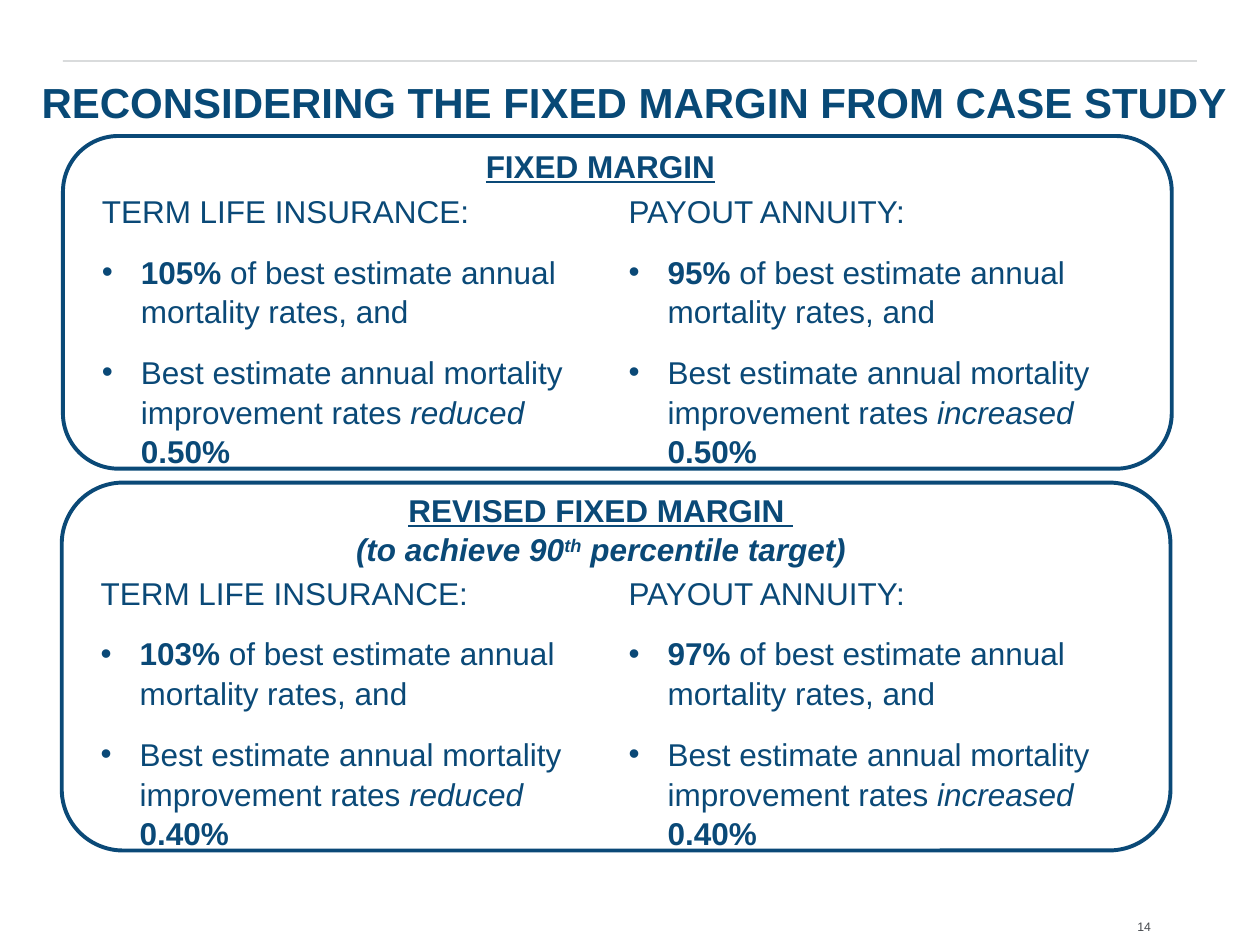
"""Build the slide comparing the fixed margin with the revised fixed margin."""
import pptx
import pptx.dml.color
import pptx.enum.shapes
import pptx.enum.text
import pptx.oxml.ns
import pptx.util
from lxml import etree

Inches, Pt = pptx.util.Inches, pptx.util.Pt
ALIGN, ANCHOR = pptx.enum.text.PP_ALIGN, pptx.enum.text.MSO_ANCHOR
SHAPE = pptx.enum.shapes.MSO_SHAPE

COLORS = {"navy": "0A4977", "title": "084976", "rule": "C6C9CA", "number": "45484D"}
FONT = "Arial"
TITLE = "RECONSIDERING THE FIXED MARGIN FROM CASE STUDY"
PAGE_NUMBER = "14"
PRODUCTS = [("TERM LIFE INSURANCE:", "reduced "), ("PAYOUT ANNUITY:", "increased ")]
PANELS = [
    {
        "frame": (0.5, 1.08, 8.8, 2.64),
        "heading_box": (2.67, 1.1, 4.19, 0.4),
        "heading": [[("FIXED MARGIN", "u")]],
        "column_lefts": (0.71, 4.89),
        "rates": ("105% ", "95% "),
        "improvement": "0.50%",
    },
    {
        "frame": (0.49, 3.83, 8.8, 2.92),
        "heading_box": (2.67, 3.83, 4.2, 0.71),
        "heading": [
            [("REVISED FIXED MARGIN ", "u")],
            [("(to achieve 90", "i"), ("th", "i^"), (" percentile target)", "i")],
        ],
        "column_lefts": (0.7, 4.89),
        "rates": ("103% ", "97% "),
        "improvement": "0.40%",
    },
]
COLUMN_WIDTH, COLUMN_HEIGHT = 4.19, 2.26
BULLET_INDENT = 0.31


def rgb(name):
    return pptx.dml.color.RGBColor.from_string(COLORS[name])


def set_font(para, size, color, bold=None):
    para.font.name = FONT
    para.font.size = Pt(size)
    para.font.color.rgb = rgb(color)
    para.font.bold = bold


def add_spans(para, spans):
    for text, style in spans:
        span = para.add_run()
        span.text = text
        if "b" in style:
            span.font.bold = True
        if "i" in style:
            span.font.italic = True
        if "u" in style:
            span.font.underline = True
        if "^" in style:
            span.font._element.set("baseline", "30000")


def add_bullet(para):
    properties = para._p.get_or_add_pPr()
    properties.set("marL", str(Inches(BULLET_INDENT)))
    properties.set("indent", str(-Inches(BULLET_INDENT)))
    font = etree.SubElement(properties, pptx.oxml.ns.qn("a:buFont"))
    font.set("typeface", FONT)
    bullet = etree.SubElement(properties, pptx.oxml.ns.qn("a:buChar"))
    bullet.set("char", "•")


def add_text(page, bounds, paragraphs, align, space_after=0, bold=None, bulleted=False):
    box = page.shapes.add_textbox(*map(Inches, bounds))
    frame = box.text_frame
    frame.word_wrap = True
    frame.auto_size = pptx.enum.text.MSO_AUTO_SIZE.SHAPE_TO_FIT_TEXT
    for index, spans in enumerate(paragraphs):
        para = frame.add_paragraph() if index else frame.paragraphs[0]
        para.alignment = align
        para.line_spacing = 1.05
        para.space_after = Pt(space_after)
        if bulleted and index:
            add_bullet(para)
        set_font(para, 18, "navy", bold)
        add_spans(para, spans)


def add_frame(page, bounds):
    frame = page.shapes.add_shape(SHAPE.ROUNDED_RECTANGLE, *map(Inches, bounds))
    frame.shadow.inherit = False
    frame.fill.background()
    frame.line.color.rgb = rgb("navy")
    frame.line.width = Pt(2.25)


def add_panel_text(page, panel):
    top = panel["frame"][1] + panel["frame"][3] - COLUMN_HEIGHT
    for left, rate, (product, change) in zip(panel["column_lefts"], panel["rates"], PRODUCTS):
        paragraphs = [
            [(product, "")],
            [(rate, "b"), ("of best estimate annual mortality rates, and", "")],
            [
                ("Best estimate annual mortality improvement rates ", ""),
                (change, "i"),
                (panel["improvement"], "b"),
            ],
        ]
        bounds = (left, top, COLUMN_WIDTH, COLUMN_HEIGHT)
        add_text(page, bounds, paragraphs, ALIGN.LEFT, space_after=12, bulleted=True)
    add_text(page, panel["heading_box"], panel["heading"], ALIGN.CENTER, bold=True)


def clear_margins(frame):
    frame.margin_left = frame.margin_right = frame.margin_top = frame.margin_bottom = 0


def format_title(title):
    title.left, title.top, title.width, title.height = map(Inches, (0.33, 0.65, 9.42, 0.93))
    frame = title.text_frame
    frame.text = TITLE
    frame.word_wrap = True
    frame.auto_size = pptx.enum.text.MSO_AUTO_SIZE.NONE
    frame.vertical_anchor = ANCHOR.TOP
    clear_margins(frame)
    para = frame.paragraphs[0]
    para.alignment = ALIGN.LEFT
    para.line_spacing = 0.9
    set_font(para, 24, "title", True)


def add_rule(page):
    rule = page.shapes.add_shape(SHAPE.RECTANGLE, *map(Inches, (0.5, 0.48, 9, 0.01)))
    rule.shadow.inherit = False
    rule.fill.solid()
    rule.fill.fore_color.rgb = rgb("rule")
    rule.line.fill.background()


def add_page_number(page):
    box = page.shapes.add_textbox(*map(Inches, (8.67, 7.18, 0.82, 0.23)))
    frame = box.text_frame
    frame.word_wrap = False
    frame.vertical_anchor = ANCHOR.BOTTOM
    clear_margins(frame)
    para = frame.paragraphs[0]
    para.text = PAGE_NUMBER
    para.alignment = ALIGN.CENTER
    set_font(para, 7, "number")


def main():
    deck = pptx.Presentation()
    deck.slide_width, deck.slide_height = Inches(10), Inches(7.5)
    page = deck.slides.add_slide(deck.slide_layouts[5])
    format_title(page.shapes.title)
    add_rule(page)
    for panel in PANELS:
        add_frame(page, panel["frame"])
        add_panel_text(page, panel)
    add_page_number(page)
    deck.save("out.pptx")


if __name__ == "__main__":
    main()
